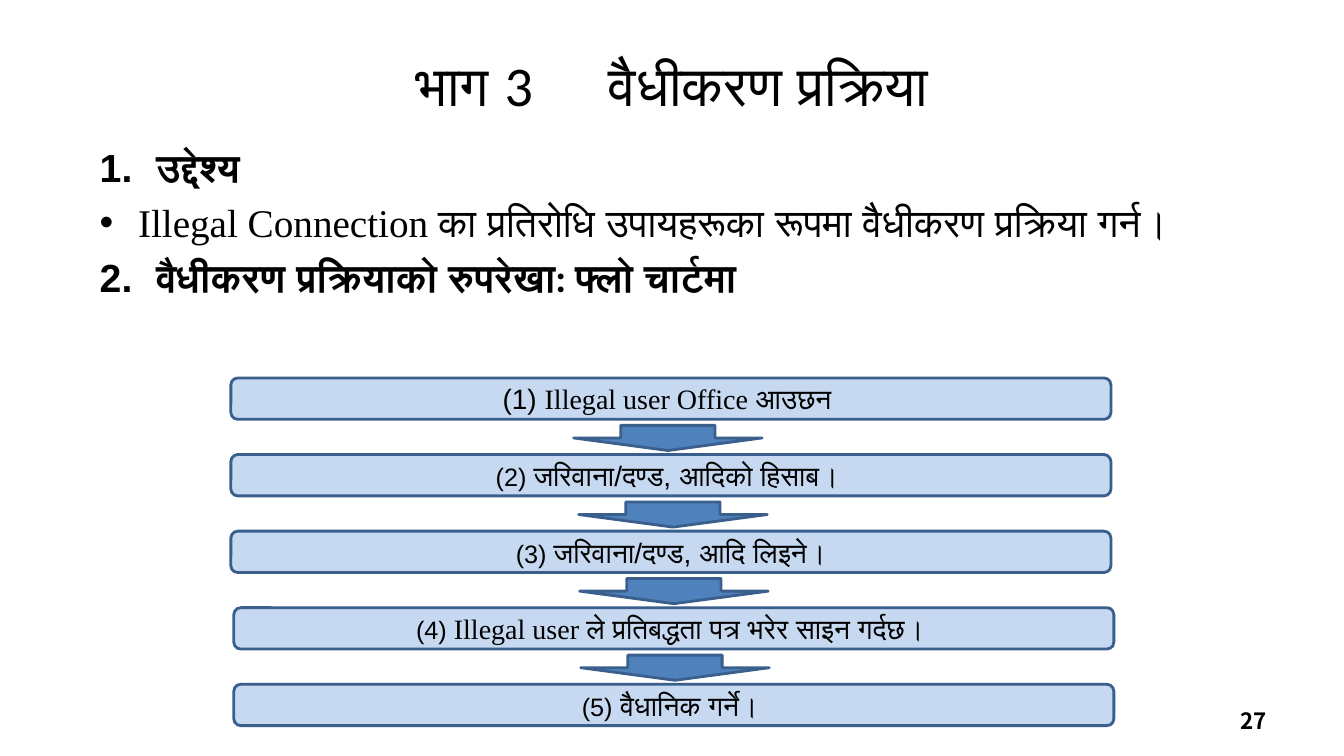
"""Build the slide on the legalisation process with its five-step flow chart."""
import lxml.etree
import pptx
import pptx.dml.color
import pptx.enum.shapes
import pptx.enum.text
import pptx.oxml.ns
import pptx.util

ALIGN = pptx.enum.text.PP_ALIGN
ANCHOR = pptx.enum.text.MSO_ANCHOR
PRESET = pptx.enum.shapes.MSO_SHAPE
Pt = pptx.util.Pt
qn = pptx.oxml.ns.qn

THEME = {
    "ink": "000000", "step": "C6D9F1", "arrow": "4F81BD", "outline": "3A5F8C",
    "outline_width": 2, "title": 40, "body": 28, "label": 20, "small_label": 18,
    "page": 16, "space_before": 5.6, "title_gap": 45,
    "main": "Calibri", "sans": "Arial", "serif": "Times New Roman",
    "page_font": "Noto Sans CJK JP",
}

deck = pptx.Presentation()
deck.slide_width = pptx.util.Inches(13.33)
deck.slide_height = pptx.util.Inches(7.5)
COLUMN = deck.slide_width / 100
ROW = deck.slide_height / 100
slide = deck.slides.add_slide(deck.slide_layouts[5])


def place(left, top, width, height):
    return [round(n) for n in (left * COLUMN, top * ROW, width * COLUMN, height * ROW)]


def write(paragraph, text, font, size, bold=False):
    run = paragraph.add_run()
    run.text = text
    look = {"name": font, "size": Pt(size), "bold": bold}
    for attribute, value in look.items():
        setattr(run.font, attribute, value)
    run.font.color.rgb = pptx.dml.color.RGBColor.from_string(THEME["ink"])
    properties = run.font._element
    lxml.etree.SubElement(properties, qn("a:cs"), typeface=THEME["sans"])
    return properties


heading = slide.shapes.title
heading_place = place(5, 2.8, 90, 16.67)
for attribute, value in zip(("left", "top", "width", "height"), heading_place):
    setattr(heading, attribute, value)
heading.text_frame.vertical_anchor = ANCHOR.MIDDLE
heading_line = heading.text_frame.paragraphs[0]
heading_line.alignment = ALIGN.CENTER
write(heading_line, "भाग 3", THEME["main"], THEME["title"])
gap = write(heading_line, " ", THEME["main"], THEME["title"])
gap.set("spc", str(THEME["title_gap"] * 100))
write(heading_line, "वैधीकरण प्रक्रिया", THEME["main"], THEME["title"])

outline = [
    ("buAutoNum", {"type": "arabicPeriod"}, 0.56, True,
     [("उद्देश्य", "main")]),
    ("buChar", {"char": "•"}, 0.38, False,
     [("Illegal Connection ", "serif"),
      ("का प्रतिरोधि उपायहरूका रूपमा वैधीकरण प्रक्रिया गर्न।", "main")]),
    ("buAutoNum", {"type": "arabicPeriod", "startAt": "2"}, 0.56, True,
     [("वैधीकरण प्रक्रियाको रुपरेखा: फ्लो चार्टमा", "main")]),
]
body = slide.shapes.add_textbox(*place(6.68, 18.27, 87.38, 32.93)).text_frame
body.word_wrap = True
for index, (marker, marker_format, indent, bold, parts) in enumerate(outline):
    point = body.add_paragraph() if index else body.paragraphs[0]
    point.space_before = Pt(THEME["space_before"])
    settings = point._p.get_or_add_pPr()
    hang = pptx.util.Inches(indent)
    settings.set("marL", str(hang))
    settings.set("indent", str(-hang))
    lxml.etree.SubElement(settings, qn("a:buFont"), typeface=THEME["sans"])
    lxml.etree.SubElement(settings, qn("a:" + marker), marker_format)
    for text, font in parts:
        write(point, text, THEME[font], THEME["body"], bold)

page = slide.shapes.add_textbox(*place(71.7, 92.67, 23.32, 5.33)).text_frame
page.word_wrap = True
page.vertical_anchor = ANCHOR.MIDDLE
page.paragraphs[0].alignment = ALIGN.RIGHT
write(page.paragraphs[0], "27", THEME["page_font"], THEME["page"], True)

steps = [
    (17.18, [("(1) ", "sans", "label"), ("Illegal user Office ", "serif", "label"),
             ("आउछन ", "sans", "label")]),
    (17.18, [("(2) ", "sans", "small_label"),
             ("जरिवाना/दण्ड, आदिको हिसाब। ", "sans", "label")]),
    (17.18, [("(3) ", "sans", "small_label"),
             ("जरिवाना/दण्ड, आदि लिइने।", "sans", "label")]),
    (17.4, [("(4) ", "sans", "small_label"), ("Illegal user ", "serif", "label"),
            ("ले प्रतिबद्धता पत्र भरेर साइन गर्दछ। ", "sans", "label")]),
    (17.4, [("(5)", "sans", "small_label"), (" वैधानिक गर्ने। ", "sans", "label")]),
]
arrow_lefts = [42.68, 43.06, 43.13, 43.21]
STEP_TOP, ARROW_TOP, PITCH = 50, 56.27, 10.13

flow = [(PRESET.FLOWCHART_ALTERNATE_PROCESS, "step",
         (left, STEP_TOP + PITCH * index, 65.48, 5.47), parts)
        for index, (left, parts) in enumerate(steps)]
flow += [(PRESET.DOWN_ARROW, "arrow",
          (left, ARROW_TOP + PITCH * index, 14.03, 3.33), [])
         for index, left in enumerate(arrow_lefts)]

for preset, fill, area, parts in flow:
    stage = slide.shapes.add_shape(preset, *place(*area))
    stage.shadow.inherit = False
    stage.fill.solid()
    stage.fill.fore_color.rgb = pptx.dml.color.RGBColor.from_string(THEME[fill])
    stage.line.color.rgb = pptx.dml.color.RGBColor.from_string(THEME["outline"])
    stage.line.width = Pt(THEME["outline_width"])
    stage.text_frame.vertical_anchor = ANCHOR.MIDDLE
    label = stage.text_frame.paragraphs[0]
    label.alignment = ALIGN.CENTER
    for text, font, size in parts:
        write(label, text, THEME[font], THEME[size])

deck.save("out.pptx")
